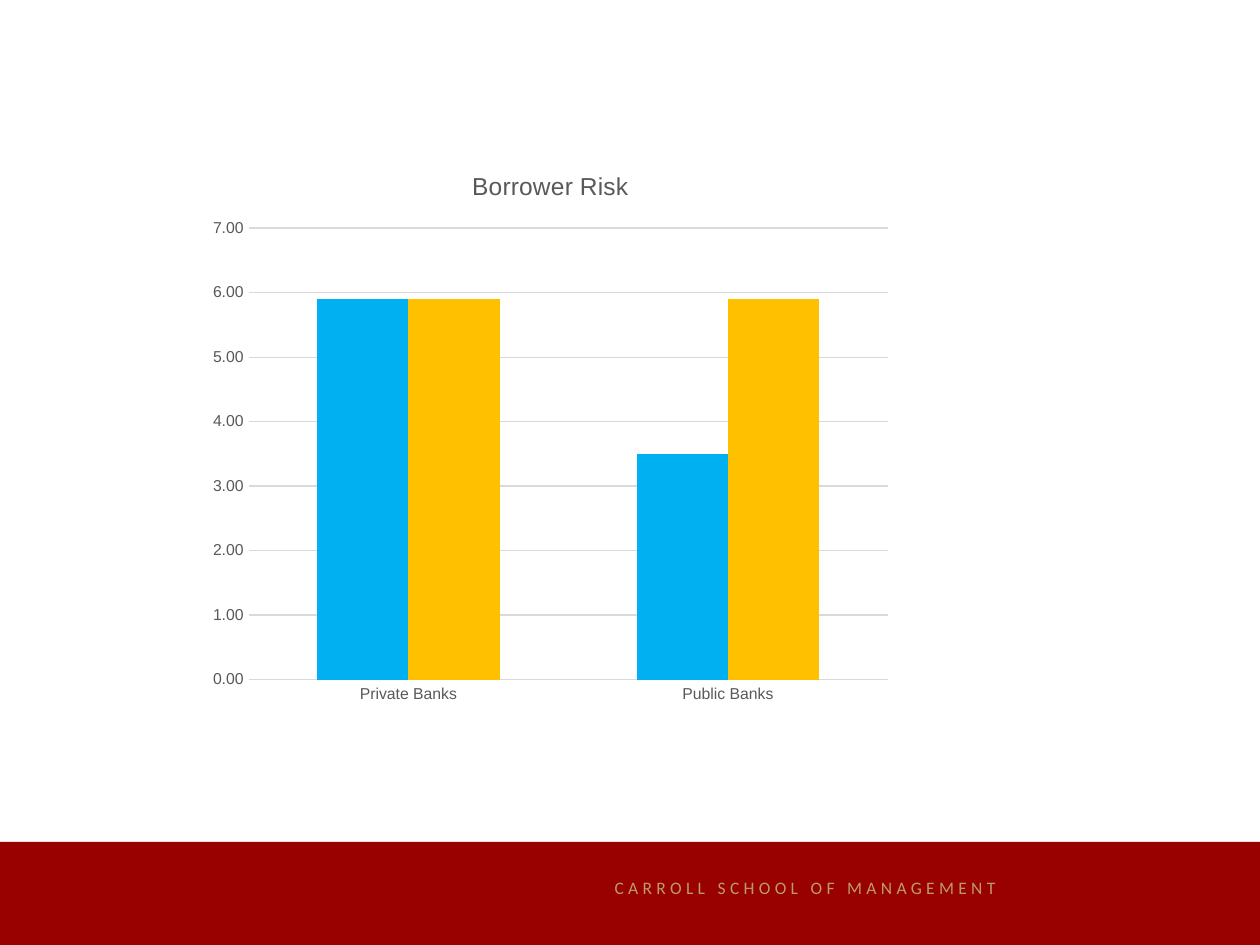
import pptx
import pptx.util
import pptx.chart.data
import pptx.dml.color
import pptx.enum.chart
import pptx.enum.shapes
import pptx.enum.text

Cm, Pt = pptx.util.Cm, pptx.util.Pt

COLORS = {
    "band": "990000",
    "school": "BC9B6A",
    "label": "595959",
    "grid": "D9D9D9",
    "blue": "00B0F0",
    "gold": "FFC000",
}


def rgb(name):
    return pptx.dml.color.RGBColor.from_string(COLORS[name])


def style_font(font, name, size, color):
    font.name = name
    font.size = Pt(size)
    font.bold = False
    font.color.rgb = rgb(color)


def add_footer(slide, left, top, width, height):
    # Red band
    sp = slide.shapes.add_shape(
        pptx.enum.shapes.MSO_SHAPE.RECTANGLE, left, top, width, height)
    sp.shadow.inherit = False
    sp.fill.solid()
    sp.fill.fore_color.rgb = rgb("band")
    sp.line.fill.background()

    # Letter-spaced school name
    box = slide.shapes.add_textbox(
        left + Cm(12.14), top + Cm(0.58), Cm(8.97), Cm(0.69))
    tf = box.text_frame
    tf.word_wrap = False
    tf.auto_size = pptx.enum.text.MSO_AUTO_SIZE.SHAPE_TO_FIT_TEXT
    tf.text = "CARROLL SCHOOL OF MANAGEMENT"
    r = tf.paragraphs[0].runs[0]
    style_font(r.font, "Calibri", 10, "school")
    r.font._element.set("spc", "250")


def add_risk_chart(slide, left, top, width, height):
    data = pptx.chart.data.CategoryChartData(number_format="0.00")
    data.categories = ["Private Banks", "Public Banks"]
    data.add_series("Series 1", [5.9, 3.5])
    data.add_series("Series 2", [5.9, 5.9])
    chart = slide.shapes.add_chart(
        pptx.enum.chart.XL_CHART_TYPE.COLUMN_CLUSTERED,
        left, top, width, height, data).chart
    chart.has_legend = False
    chart.font.name = "Arial"
    chart.font.size = Pt(10)

    # Title
    tf = chart.chart_title.text_frame
    tf.text = "Borrower Risk"
    style_font(tf.paragraphs[0].runs[0].font, "Arial", 14, "label")
    chart.chart_title.include_in_layout = False

    # Columns
    plot = chart.plots[0]
    plot.gap_width = 150
    plot.overlap = 0
    plot.vary_by_categories = False
    for series, color in zip(plot.series, ("blue", "gold")):
        series.format.fill.solid()
        series.format.fill.fore_color.rgb = rgb(color)

    # Axes
    for axis in (chart.category_axis, chart.value_axis):
        axis.major_tick_mark = pptx.enum.chart.XL_TICK_MARK.NONE
        axis.minor_tick_mark = pptx.enum.chart.XL_TICK_MARK.NONE
        axis.format.line.fill.background()
        style_font(axis.tick_labels.font, "Arial", 9, "label")
    values = chart.value_axis
    values.minimum_scale, values.maximum_scale, values.major_unit = 0, 7, 1
    values.tick_labels.number_format = "0.00"
    values.tick_labels.number_format_is_linked = False
    values.has_major_gridlines = True
    line = values.major_gridlines.format.line
    line.color.rgb = rgb("grid")
    line.width = Pt(0.75)


def main():
    prs = pptx.Presentation()
    prs.slide_width, prs.slide_height = Cm(25.4), Cm(19.05)
    slide = prs.slides.add_slide(prs.slide_layouts[6])
    add_footer(slide, 0, Cm(16.97), prs.slide_width, Cm(2.13))
    add_risk_chart(slide, Cm(4.01), Cm(2.97), Cm(14.17), Cm(11.43))
    prs.save("out.pptx")


if __name__ == "__main__":
    main()
